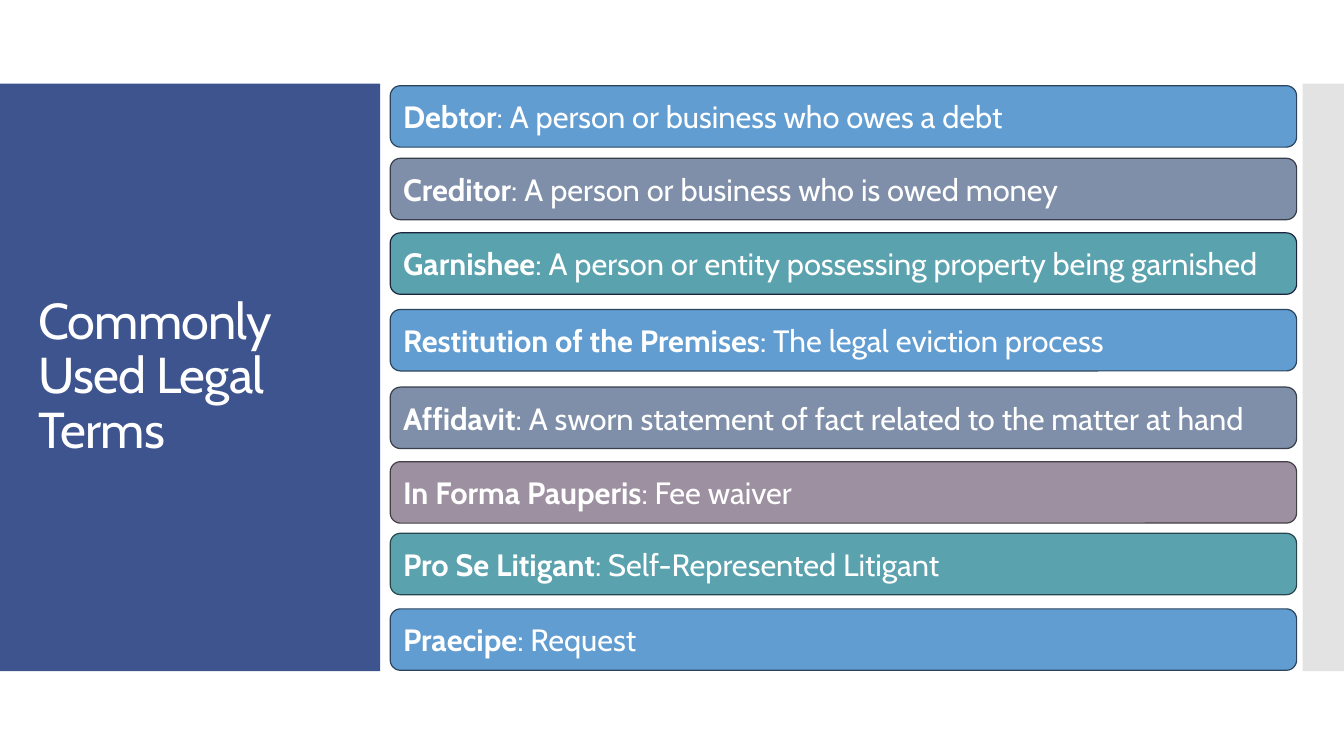
from dataclasses import dataclass

from lxml.etree import SubElement
from pptx import Presentation
from pptx.dml.color import RGBColor
from pptx.enum.shapes import MSO_SHAPE as Preset
from pptx.enum.text import MSO_ANCHOR as Anchor, MSO_AUTO_SIZE as AutoSize, PP_ALIGN as Align
from pptx.oxml.ns import qn
from pptx.util import Inches, Pt


@dataclass(frozen=True)
class Theme:
    font: str = "Cabin"
    text: str = "FFFFFF"
    panel: str = "3D548F"
    edge: str = "C8C8C8"
    blue: tuple = ("629DD1", "2B455C")
    slate: tuple = ("7F8FA9", "383F4A")
    teal: tuple = ("5AA2AE", "27474C")
    teal_dark: tuple = ("5AA2AE", "1B253F")
    mauve: tuple = ("9D90A0", "453F46")
    title_size: float = 36
    term_size: float = 22
    border: float = 0.85


THEME = Theme()

TERMS = [
    (0, "Debtor", "A person or business who owes a debt", THEME.blue),
    (0.72, "Creditor", "A person or business who is owed money", THEME.slate),
    (1.46, "Garnishee", "A person or entity possessing property being garnished", THEME.teal_dark),
    (2.22, "Restitution of the Premises", "The legal eviction process", THEME.blue),
    (2.99, "Affidavit", "A sworn statement of fact related to the matter at hand", THEME.slate),
    (3.73, "In Forma Pauperis", "Fee waiver", THEME.mauve),
    (4.44, "Pro Se Litigant", "Self-Represented Litigant", THEME.teal),
    (5.19, "Praecipe", "Request", THEME.blue),
]


def add_box(slide, preset, box, fill, line=None, alpha=None):
    shape = slide.shapes.add_shape(preset, *map(Inches, box))
    shape.shadow.inherit = False
    shape.fill.solid()
    shape.fill.fore_color.rgb = RGBColor.from_string(fill)
    if alpha is not None:
        color = shape.fill._xPr.find(qn("a:solidFill"))[0]
        SubElement(color, qn("a:alpha")).set("val", str(alpha * 1000))
    if line:
        shape.line.color.rgb = RGBColor.from_string(line)
        shape.line.width = Pt(THEME.border)
    else:
        shape.line.fill.background()
    return shape


def write_text(shape, *runs, size, line_spacing=None, tracking=None):
    frame = shape.text_frame
    frame.word_wrap = True
    frame.auto_size = AutoSize.NONE
    frame.vertical_anchor = Anchor.MIDDLE
    paragraph = frame.paragraphs[0]
    paragraph.alignment = Align.LEFT
    if line_spacing:
        paragraph.line_spacing = line_spacing
    for text, bold in runs:
        run = paragraph.add_run()
        run.text = text
        run.font.name = THEME.font
        run.font.size = Pt(size)
        run.font.bold = bold
        run.font.color.rgb = RGBColor.from_string(THEME.text)
        if tracking:
            run.font._element.set("spc", str(round(tracking * 100)))


def add_title_panel(slide, box, title_text):
    left, top, width, height = box
    panel = add_box(slide, Preset.RECTANGLE, box, THEME.panel)
    title = slide.shapes.title
    panel._element.addnext(title._element)
    title.left, title.top = Inches(left + 0.28), Inches(top + 0.4)
    title.width, title.height = Inches(width - 0.55), Inches(height - 0.8)
    write_text(title, (title_text, False), size=THEME.title_size,
               line_spacing=0.9, tracking=-0.6)


def add_terms(slide, box, terms, row_height=0.61):
    left, top, width, _ = box
    for offset, term, meaning, (fill, line) in terms:
        row = (left, top + offset, width, row_height)
        shape = add_box(slide, Preset.ROUNDED_RECTANGLE, row, fill, line)
        write_text(shape, (term, True), (f": {meaning}", False), size=THEME.term_size)


def main():
    presentation = Presentation()
    presentation.slide_width = Inches(13.33)
    presentation.slide_height = Inches(7.5)
    slide = presentation.slides.add_slide(presentation.slide_layouts[5])
    add_title_panel(slide, (0, 0.83, 3.77, 5.83), "Commonly Used Legal Terms")
    add_box(slide, Preset.RECTANGLE, (12.92, 0.83, 0.41, 5.83), THEME.edge, alpha=50)
    add_terms(slide, (3.87, 0.85, 8.99, 5.8), TERMS)
    presentation.save("out.pptx")


if __name__ == "__main__":
    main()
